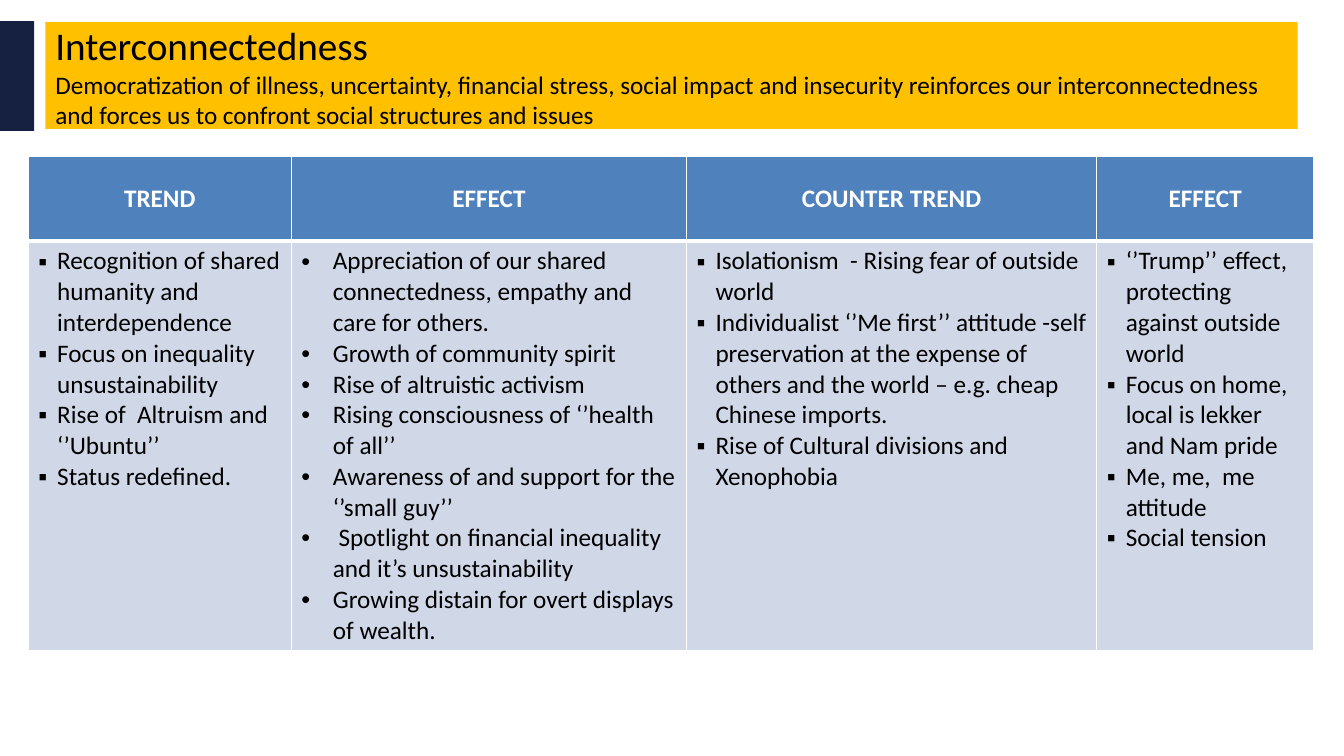
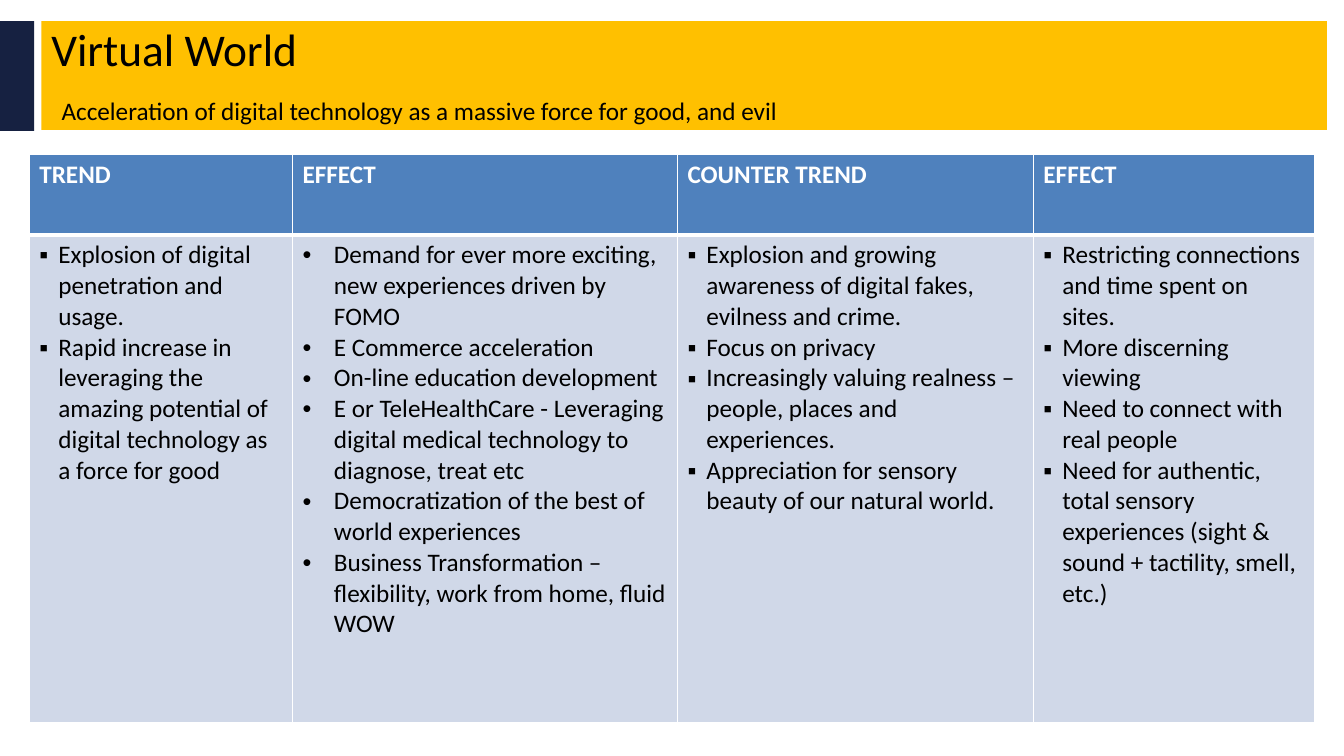
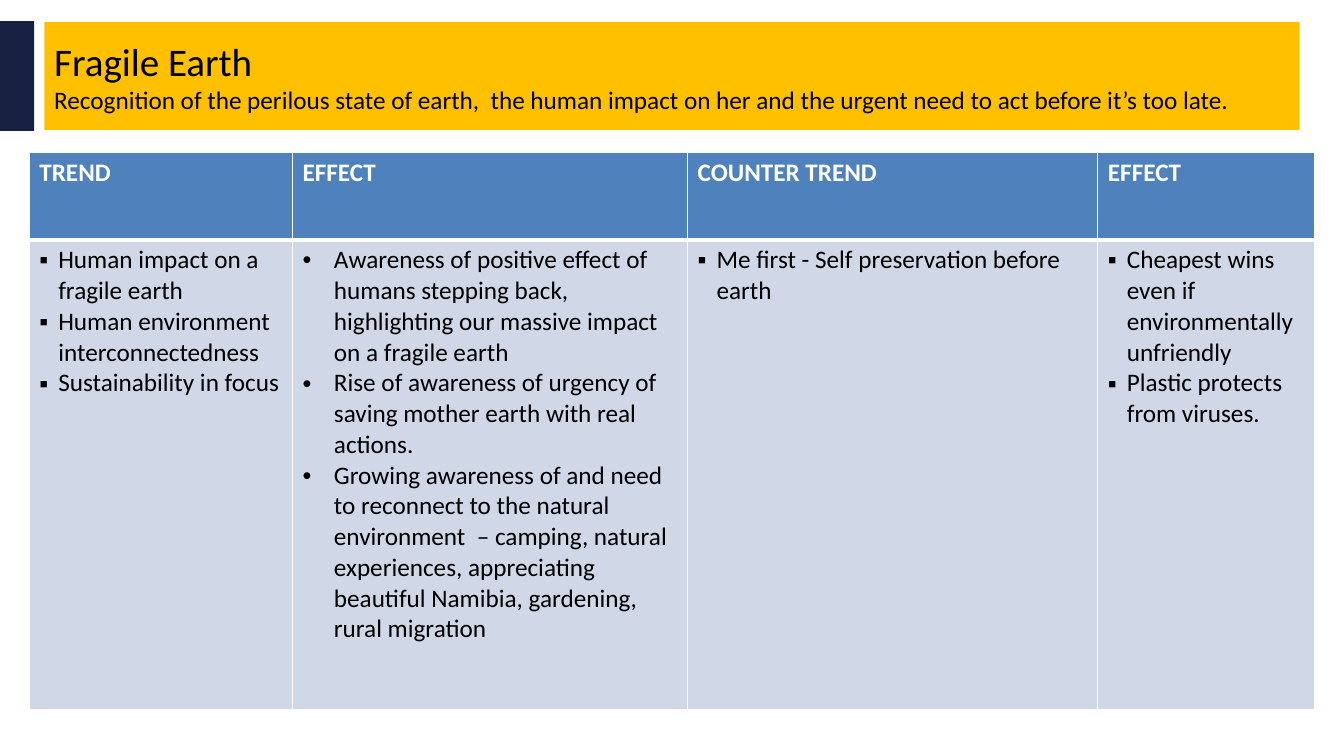
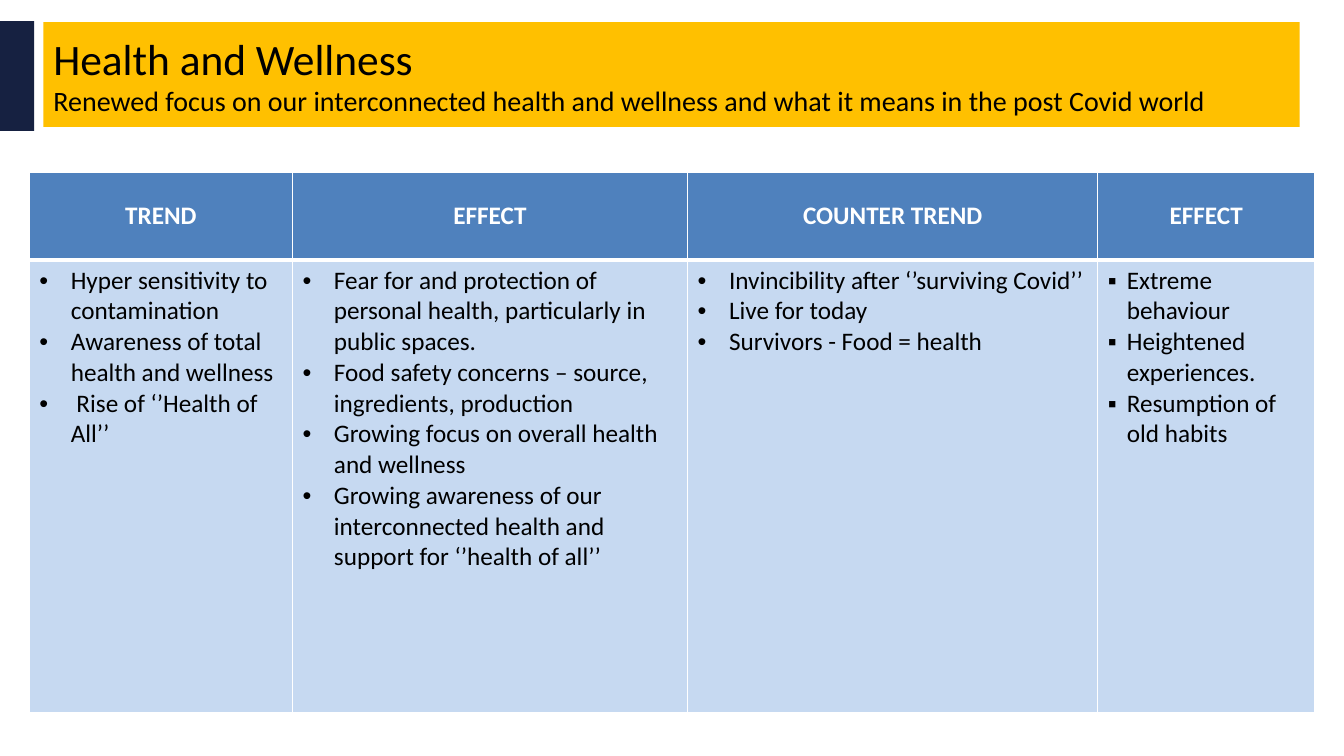
from lxml.etree import SubElement
from pptx import Presentation
from pptx.dml.color import RGBColor
from pptx.enum.shapes import MSO_SHAPE
from pptx.enum.text import MSO_ANCHOR, PP_ALIGN
from pptx.oxml.ns import qn
from pptx.util import Inches, Pt

NAVY, GOLD, BLUE, WHITE, BLACK = "162141", "FFC000", "4F81BD", "FFFFFF", "000000"
GREY_BLUE, SKY_BLUE = "D0D8E8", "C6D9F1"
FONT = "Calibri"
HEADERS = ["TREND", "EFFECT", "COUNTER TREND", "EFFECT"]
WIDE_EFFECT = [19.58, 29.4, 30.53, 16.13]
WIDE_LAST = [19.58, 28.65, 26.48, 20.93]
INDENTS = {"▪": 1.41, "•": 2.34}

SLIDES = [
    {
        "title": [("Interconnectedness", 28)],
        "subtitle": [("Democratization of illness, uncertainty, financial stress, social impact and insecurity reinforces our interconnectedness and forces us to confront social structures and issues", 18)],
        "banner": (3.38, 2.93, 93.17, 14.13),
        "table": (2.1, 20.67), "columns": WIDE_EFFECT, "rows": (11.2, 54.1),
        "centred": True, "fill": GREY_BLUE, "marks": "▪•▪▪",
        "points": [
            ["Recognition of shared humanity and interdependence",
             "Focus on inequality unsustainability",
             "Rise of  Altruism and ‘’Ubuntu’’",
             "Status redefined."],
            ["Appreciation of our shared connectedness, empathy and care for others.",
             "Growth of community spirit",
             "Rise of altruistic activism",
             "Rising consciousness of ‘’health of all’’",
             "Awareness of and support for the ‘’small guy’’",
             " Spotlight on financial inequality and it’s unsustainability",
             "Growing distain for overt displays of wealth."],
            ["Isolationism  - Rising fear of outside world",
             "Individualist ‘’Me first’’ attitude -self preservation at the expense of others and the world – e.g. cheap Chinese imports.",
             "Rise of Cultural divisions and Xenophobia"],
            ["‘’Trump’’ effect, protecting against outside world",
             "Focus on home, local is lekker and Nam pride",
             "Me, me,  me attitude",
             "Social tension"],
        ],
    },
    {
        "title": [("Virtual World", 32.4)],
        "subtitle": [(" ", 32.4), ("Acceleration of digital technology as a massive force for good, and evil", 18)],
        "banner": (3.08, 2.8, 95.65, 14.4),
        "table": (2.18, 20.4), "columns": WIDE_LAST, "rows": (10.67, 64.53),
        "centred": False, "fill": GREY_BLUE, "marks": "▪•▪▪",
        "points": [
            ["Explosion of digital  penetration and usage.",
             "Rapid increase in leveraging the amazing potential of digital technology as a force for good"],
            ["Demand for ever more exciting, new experiences driven by FOMO",
             "E Commerce acceleration",
             "On-line education development",
             "E or TeleHealthCare - Leveraging digital medical technology to diagnose, treat etc",
             "Democratization of the best of world experiences",
             "Business Transformation – flexibility, work from home, fluid WOW"],
            ["Explosion and growing awareness of digital fakes, evilness and crime.",
             "Focus on privacy",
             "Increasingly valuing realness – people, places and experiences.",
             "Appreciation for sensory beauty of our natural world."],
            ["Restricting connections and time spent on sites.",
             "More discerning viewing",
             "Need to connect with real people",
             "Need for authentic, total sensory experiences (sight & sound + tactility, smell, etc.)"],
        ],
    },
    {
        "title": [("Fragile Earth", 27.9)],
        "subtitle": [("Recognition of the perilous state of earth,  the human impact on her and the urgent need to act before it’s too late.", 18)],
        "banner": (3.3, 2.93, 93.4, 14.27),
        "table": (2.18, 20.13), "columns": WIDE_EFFECT, "rows": (11.6, 62.2),
        "centred": False, "fill": GREY_BLUE, "marks": "▪•▪▪",
        "points": [
            ["Human impact on a fragile earth",
             "Human environment interconnectedness",
             "Sustainability in focus"],
            ["Awareness of positive effect of humans stepping back, highlighting our massive impact on a fragile earth",
             "Rise of awareness of urgency of saving mother earth with real actions.",
             "Growing awareness of and need to reconnect to the natural environment  – camping, natural experiences, appreciating beautiful Namibia, gardening, rural migration"],
            ["Me first - Self preservation before earth"],
            ["Cheapest wins even if environmentally unfriendly",
             "Plastic protects from viruses."],
        ],
    },
    {
        "title": [("Health and Wellness", 31)],
        "subtitle": [("Renewed focus on our interconnected health and wellness and what it means in the post Covid world", 20)],
        "banner": (3.23, 2.93, 93.47, 13.87),
        "table": (2.18, 22.8), "columns": WIDE_EFFECT, "rows": (11.6, 59.9),
        "centred": True, "fill": SKY_BLUE, "marks": "•••▪",
        "points": [
            ["Hyper sensitivity to contamination",
             "Awareness of total health and wellness",
             " Rise of ‘’Health of All’’"],
            ["Fear for and protection of personal health, particularly in public spaces.",
             "Food safety concerns – source, ingredients, production",
             "Growing focus on overall health and wellness",
             "Growing awareness of our interconnected health and support for ‘’health of all’’"],
            ["Invincibility after ‘’surviving Covid’’",
             "Live for today",
             "Survivors - Food = health"],
            ["Extreme behaviour",
             "Heightened experiences.",
             "Resumption of old habits"],
        ],
    },
]

deck = Presentation()
deck.slide_width, deck.slide_height = Inches(13.33), Inches(7.5)
layout = deck.slide_layouts[6]


def paint(fill, colour):
    fill.solid()
    fill.fore_color.rgb = RGBColor.from_string(colour)


def place(left, top, width, height):
    return [int(deck.slide_width * left / 100), int(deck.slide_height * top / 100),
            int(deck.slide_width * width / 100), int(deck.slide_height * height / 100)]


for number, content in enumerate(SLIDES):
    page = deck.slides.add_slide(layout)
    if number == 0:
        band = page.shapes.add_shape(MSO_SHAPE.RECTANGLE, *place(0, 2.8, 2.55, 14.53))
        band.shadow.inherit = False
        paint(band.fill, NAVY)
        band.line.fill.background()
        layout.shapes.element.append(band.element)

    banner = page.shapes.add_shape(MSO_SHAPE.RECTANGLE, *place(*content["banner"]))
    banner.shadow.inherit = False
    paint(banner.fill, GOLD)
    banner.line.fill.background()
    banner.text_frame.word_wrap = True
    banner.text_frame.vertical_anchor = MSO_ANCHOR.MIDDLE
    para = banner.text_frame.paragraphs[0]
    para.alignment = PP_ALIGN.LEFT
    for line in ("title", "subtitle"):
        if line == "subtitle":
            para.add_line_break()
        for words, size in content[line]:
            span = para.add_run()
            span.text = words
            span.font.name, span.font.size = FONT, Pt(size)
            paint(span.font.fill, BLACK)

    columns, rows = content["columns"], content["rows"]
    area = place(*content["table"], sum(columns), sum(rows))
    table = page.shapes.add_table(2, len(columns), *area).table
    for column, share in zip(table.columns, columns):
        column.width = int(deck.slide_width * share / 100)
    for row, share in zip(table.rows, rows):
        row.height = int(deck.slide_height * share / 100)

    for index, cell in enumerate(table.iter_cells()):
        row, column = divmod(index, len(columns))
        header = row == 0
        properties = cell._tc.get_or_add_tcPr()
        for side in "LRTB":
            thick = side == ("B" if header else "T")
            edge = SubElement(properties, qn(f"a:ln{side}"), w=str(Pt(3 if thick else 1)))
            SubElement(SubElement(edge, qn("a:solidFill")), qn("a:srgbClr"), val=WHITE)
        paint(cell.fill, BLUE if header else content["fill"])
        if header and content["centred"]:
            cell.vertical_anchor = MSO_ANCHOR.MIDDLE
        cell.text_frame.text = HEADERS[column] if header else "\n".join(content["points"][column])
        for para in cell.text_frame.paragraphs:
            if header:
                para.alignment = PP_ALIGN.CENTER if content["centred"] else PP_ALIGN.LEFT
            else:
                mark = content["marks"][column]
                indent = int(deck.slide_width * INDENTS[mark] / 100)
                bullet = para._p.get_or_add_pPr()
                bullet.set("marL", str(indent))
                bullet.set("indent", str(-indent))
                SubElement(bullet, qn("a:buFont"), typeface="Arial")
                SubElement(bullet, qn("a:buChar"), char=mark)
            for span in para.runs:
                span.font.name, span.font.size, span.font.bold = FONT, Pt(18), header
                paint(span.font.fill, WHITE if header else BLACK)

deck.save("out.pptx")
